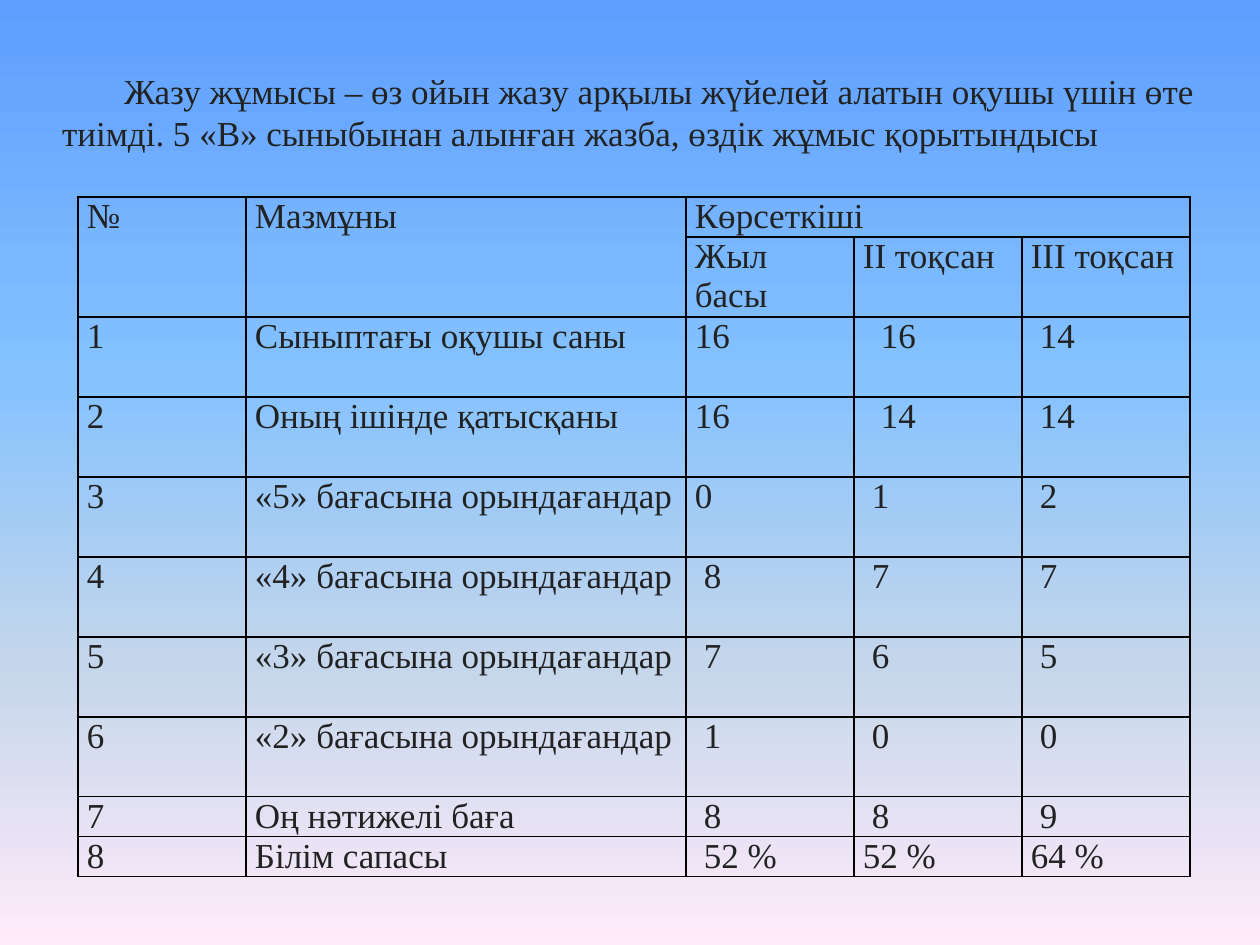
"""Build a slide with a table of class writing results by school term."""
from lxml import etree
from pptx import Presentation, util as u
from pptx.dml import color
from pptx.enum import text
from pptx.oxml import ns

TITLE = ("Жазу жұмысы – өз ойын жазу арқылы жүйелей алатын оқушы үшін өте "
         "тиімді. 5 «В» сыныбынан алынған жазба, өздік жұмыс қорытындысы")
ROWS = [
    ["№", "Мазмұны", "Көрсеткіші", "", ""],
    ["", "", "Жыл басы", "ІІ тоқсан", "ІІІ тоқсан"],
    ["1", "Сыныптағы оқушы саны", "16", "16", "14"],
    ["2", "Оның ішінде қатысқаны", "16", "14", "14"],
    ["3", "«5» бағасына орындағандар", "0", "1", "2"],
    ["4", "«4» бағасына орындағандар", "8", "7", "7"],
    ["5", "«3» бағасына орындағандар", "7", "6", "5"],
    ["6", "«2» бағасына орындағандар", "1", "0", "0"],
    ["7", "Оң нәтижелі баға", "8", "8", "9"],
    ["8", "Білім сапасы", "52 %", "52 %", "64 %"],
]
MERGES = [((0, 0), (1, 0)), ((0, 1), (1, 1)), ((0, 2), (0, 4))]
INDENTS = {2: (0, 2, 1), 3: (0, 2, 1), 4: (0, 1, 1), 5: (1, 1, 1),
           6: (1, 1, 1), 7: (1, 1, 1), 8: (1, 1, 1), 9: (1, 0, 0)}
COLS = [168, 440, 168, 168, 168]
HEIGHTS = [40] + [80] * 7 + [40] * 2
COLORS = {"text": "222222", "line": "000000"}
GRADIENT = [(0, "5E9EFF"), (40, "85C2FF"), (70, "C4D6EB"), (100, "FFEBFA")]
FONT, SIZE, INSET, STEP = "Times New Roman", 20, 9, 9


def px(n):
    return u.Emu(n * 914400 // 126)


def add_color(parent, value):
    etree.SubElement(parent, ns.qn("a:srgbClr"), val=value)


def paint_background(s):
    fill = s.background.fill
    fill.gradient()
    fill.gradient_angle = 270
    stops = s.background._cSld.find(".//" + ns.qn("a:gsLst"))
    for stop in list(stops):
        stops.remove(stop)
    for pos, value in GRADIENT:
        add_color(etree.SubElement(stops, ns.qn("a:gs"), pos=str(pos * 1000)), value)


def write(tf, words, indent=0, first=0):
    tf.text = words
    p = tf.paragraphs[0]
    p.alignment = text.PP_ALIGN.LEFT
    pr = p._p.get_or_add_pPr()
    pr.set("marL", str(px(indent)))
    pr.set("indent", str(px(first)))
    for r in p.runs:
        r.font.name, r.font.size = FONT, u.Pt(SIZE)
        r.font.color.rgb = color.RGBColor.from_string(COLORS["text"])


def format_cell(cell):
    cell.margin_left = cell.margin_right = px(INSET)
    cell.margin_top = cell.margin_bottom = 0
    pr = cell._tc.get_or_add_tcPr()
    for side in "LRTB":
        ln = etree.SubElement(pr, ns.qn("a:ln" + side), w=str(u.Pt(1)))
        add_color(etree.SubElement(ln, ns.qn("a:solidFill")), COLORS["line"])
    cell.fill.background()


def add_title(s):
    sp = s.shapes.title
    sp.left, sp.top, sp.width, sp.height = px(49), px(59), px(1182), px(140)
    tf = sp.text_frame
    tf.word_wrap = True
    tf.auto_size = text.MSO_AUTO_SIZE.NONE
    tf.vertical_anchor = text.MSO_ANCHOR.TOP
    tf.margin_left = tf.margin_right = px(13)
    tf.margin_top = px(10)
    write(tf, TITLE, first=62)


def add_results(s):
    frame = s.shapes.add_table(len(ROWS), len(COLS), px(78), px(197),
                               px(sum(COLS)), px(sum(HEIGHTS)))
    table = frame.table
    table.first_row = table.horz_banding = False
    for col, width in zip(table.columns, COLS):
        col.width = px(width)
    for row, height in zip(table.rows, HEIGHTS):
        row.height = px(height)
    for i, row in enumerate(ROWS):
        steps = (0, 0) + INDENTS.get(i, (0, 0, 0))
        for j, words in enumerate(row):
            cell = table.cell(i, j)
            format_cell(cell)
            write(cell.text_frame, words, indent=steps[j] * STEP)
    for start, end in MERGES:
        table.cell(*start).merge(table.cell(*end))


def main():
    prs = Presentation()
    prs.slide_width, prs.slide_height = px(1260), px(945)
    s = prs.slides.add_slide(prs.slide_layouts[5])
    paint_background(s)
    add_title(s)
    add_results(s)
    prs.save("out.pptx")


if __name__ == "__main__":
    main()
